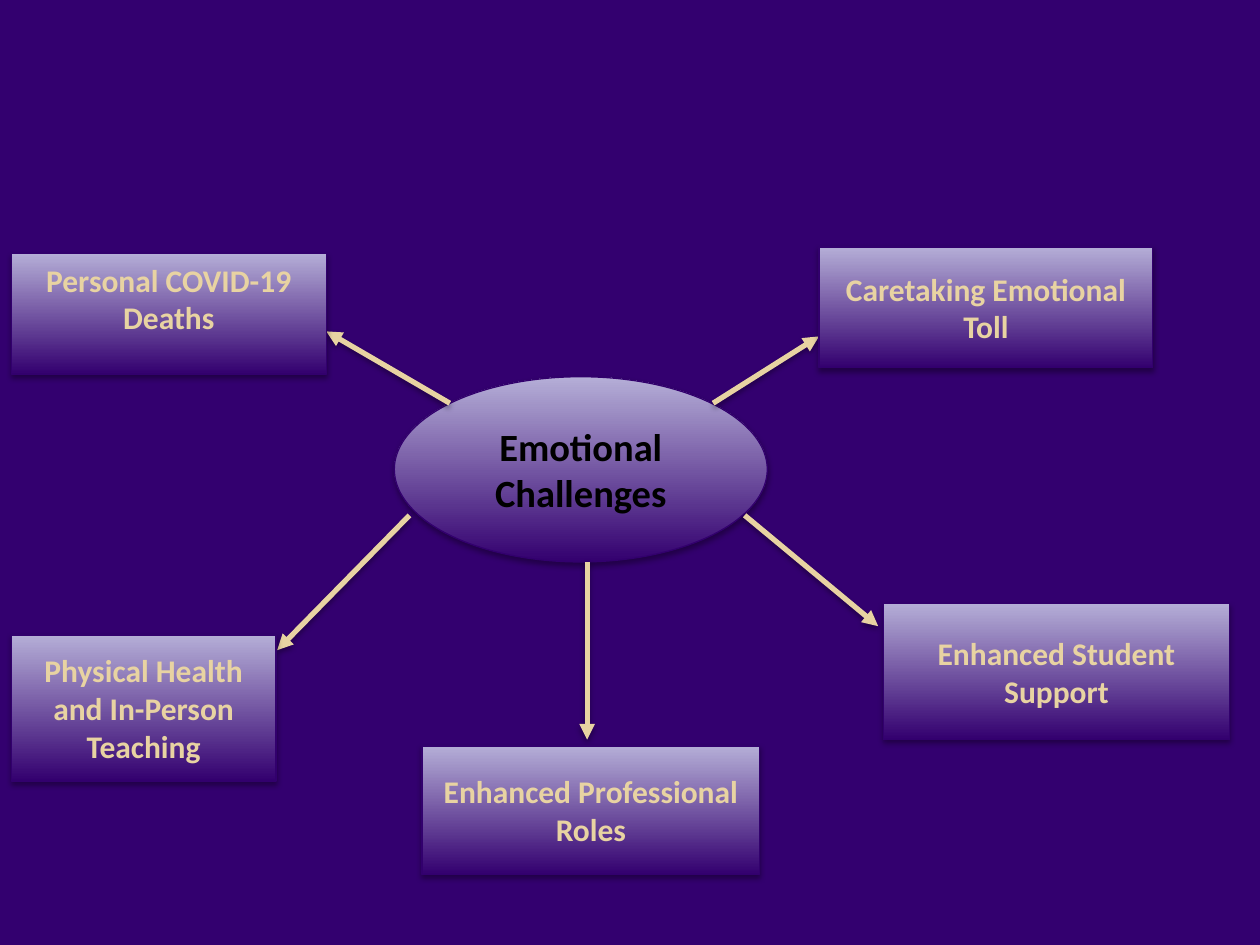
from lxml.etree import SubElement
from pptx import Presentation
from pptx.dml.color import RGBColor
from pptx.enum.shapes import MSO_CONNECTOR, MSO_SHAPE
from pptx.enum.text import MSO_ANCHOR, PP_ALIGN
from pptx.oxml.ns import qn
from pptx.util import Inches, Pt

THEME = {
    "purple": RGBColor.from_string("33006F"),
    "lavender": RGBColor.from_string("B5AED7"),
    "outline": RGBColor.from_string("32006D"),
    "gold": RGBColor.from_string("E8D3A2"),
    "black": RGBColor.from_string("000000"),
    "font": "Calibri",
    "hub_size": Pt(22),
    "box_size": Pt(18),
    "outline_width": Pt(0.75),
    "arrow_width": Pt(3),
}

deck = Presentation()
deck.slide_width, deck.slide_height = Inches(10), Inches(7.5)
slide = deck.slides.add_slide(deck.slide_layouts[6])
slide.background.fill.solid()
slide.background.fill.fore_color.rgb = THEME["purple"]

# Grid of 100 columns by 75 rows
COLUMN, ROW = deck.slide_width / 100, deck.slide_height / 75


def on_grid(*cells):
    """Turn alternating columns and rows into lengths."""
    return [round(cell * unit) for cell, unit in zip(cells, (COLUMN, ROW) * 2)]


def add_soft_shadow(properties):
    effects = SubElement(properties, qn("a:effectLst"))
    shadow = SubElement(effects, qn("a:outerShdw"), blurRad="40000",
                        dist="23000", dir="5400000", rotWithShape="0")
    black = SubElement(shadow, qn("a:srgbClr"), val="000000")
    SubElement(black, qn("a:alpha"), val="35000")


# Arrows from the hub: start column and row, end column and row
arrows = [
    (32.5, 40.9, 22, 51.6),
    (46.6, 44.6, 46.6, 58.7),
    (59.1, 40.9, 69.7, 49.7),
    (35.7, 32, 25.9, 26.3),
    (56.6, 32, 65, 26.7),
]

# Hub and challenges: outline, text, place on the grid, type, lower inset
hub_type = {"size": THEME["hub_size"], "name": THEME["font"], "bold": True}
box_type = hub_type | {"size": THEME["box_size"]}
RECT = MSO_SHAPE.RECTANGLE
topics = [
    (MSO_SHAPE.OVAL, "Emotional Challenges", (31.3, 29.9, 29.6, 14.7),
     hub_type, "black", 0.5),
    (RECT, "Personal COVID-19 Deaths", (0.9, 20.1, 25, 9.6), box_type, "gold", 2.9),
    (RECT, "Caretaking Emotional Toll", (65, 19.6, 26.5, 9.6), box_type, "gold", 0.5),
    (RECT, "Physical Health and In-Person Teaching", (0.9, 50.4, 21, 11.6),
     box_type, "gold", 0.5),
    (RECT, "Enhanced Professional Roles", (33.5, 59.2, 26.8, 10.2),
     box_type, "gold", 0.5),
    (RECT, "Enhanced Student Support", (70.1, 47.9, 27.5, 10.8),
     box_type, "gold", 0.5),
]

for outline, wording, place, type_format, text_color, lower_inset in topics:
    topic = slide.shapes.add_shape(outline, *on_grid(*place))
    topic.fill.gradient()
    topic.fill.gradient_angle = 90
    for stop, color in zip(topic.fill.gradient_stops, ("purple", "lavender")):
        stop.color.rgb = THEME[color]
    topic.line.color.rgb = THEME["outline"]
    topic.line.width = THEME["outline_width"]
    add_soft_shadow(topic.element.spPr)

    frame = topic.text_frame
    frame.word_wrap = True
    frame.vertical_anchor = MSO_ANCHOR.MIDDLE
    frame.margin_bottom = round(lower_inset * ROW)
    frame.text = wording
    label = frame.paragraphs[0]
    label.alignment = PP_ALIGN.CENTER
    font = label.runs[0].font
    for attribute, value in type_format.items():
        setattr(font, attribute, value)
    font.color.rgb = THEME[text_color]

    # Arrows lie above the hub and below the boxes
    if outline == MSO_SHAPE.OVAL:
        for ends in arrows:
            arrow = slide.shapes.add_connector(MSO_CONNECTOR.STRAIGHT, *on_grid(*ends))
            arrow.line.color.rgb = THEME["gold"]
            arrow.line.width = THEME["arrow_width"]
            properties = arrow.element.spPr
            SubElement(properties.find(qn("a:ln")), qn("a:tailEnd"), type="triangle")
            add_soft_shadow(properties)

deck.save("out.pptx")
